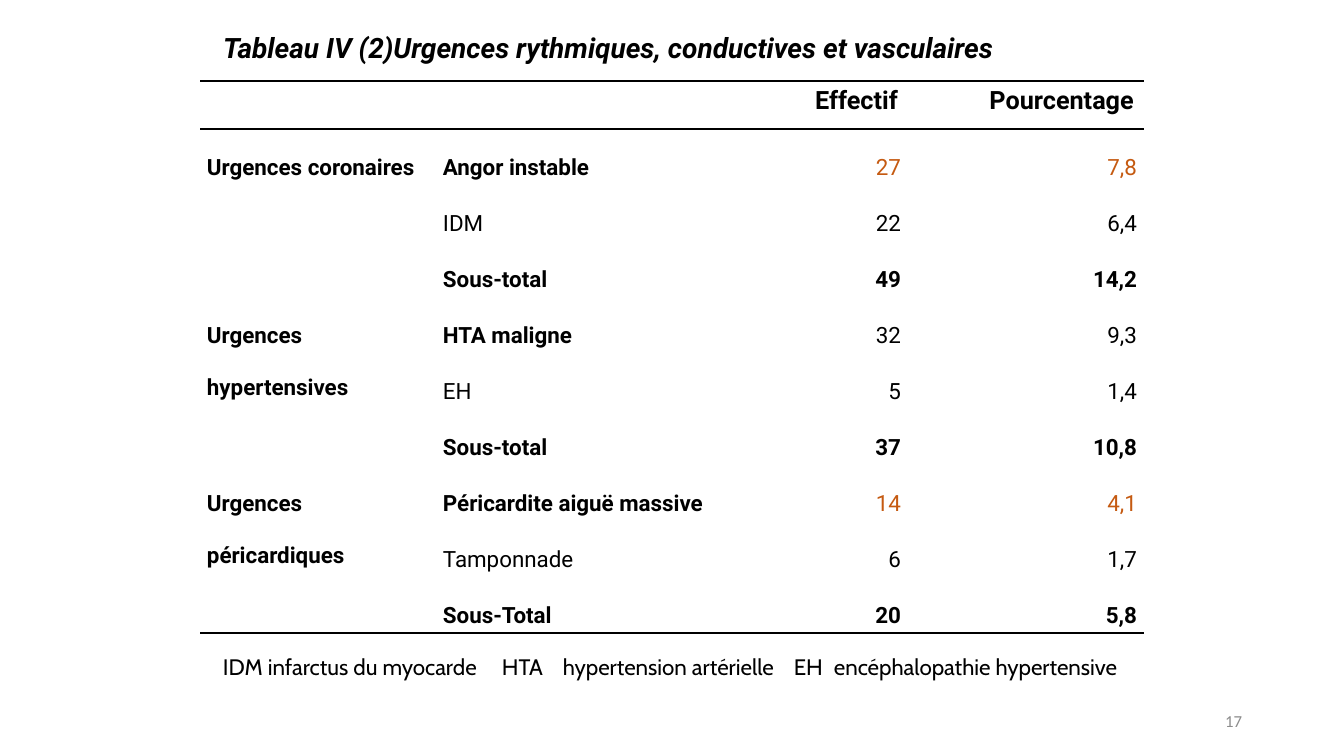
from dataclasses import dataclass
from lxml import etree
from pptx import Presentation, util as u
from pptx.dml.color import RGBColor
from pptx.enum import text
from pptx.oxml.ns import qn

TITLE = "Tableau IV (2)Urgences rythmiques, conductives et vasculaires"
HEADS = ["Effectif", "Pourcentage"]
GROUPS = [
    ("Urgences coronaires", [
        ("Angor instable", "27", "7,8"),
        ("IDM", "22", "6,4"),
        ("Sous-total", "49", "14,2")]),
    ("Urgences hypertensives", [
        ("HTA maligne", "32", "9,3"),
        ("EH", "5", "1,4"),
        ("Sous-total", "37", "10,8")]),
    ("Urgences péricardiques", [
        ("Péricardite aiguë massive", "14", "4,1"),
        ("Tamponnade", "6", "1,7"),
        ("Sous-Total", "20", "5,8")]),
]
MARKED = {"Angor instable", "Péricardite aiguë massive"}
NOTE = ["IDM infarctus du myocarde", "HTA", "hypertension artérielle",
        "EH", "encéphalopathie hypertensive"]
STOPS = [279, 340, 571, 611]
NUMBER = "17"

TITLE_BOX = (213, 25, 932, 44)
NOTE_BOX = (213, 648, 1026, 37)
NUMBER_BOX = (950, 701, 302, 40)
TABLE_AT = (200, 81)
COLS = [236, 351, 121, 236]
HEAD_H, ROW_H = 48, 56
PAD = 7
NO_GRID = "{2D5ABB26-0587-4C30-8999-92F81FD0307C}"
LEFT, RIGHT = text.PP_ALIGN.LEFT, text.PP_ALIGN.RIGHT


@dataclass(frozen=True)
class Theme:
    ink: str = "000000"
    mark: str = "C55A11"
    gray: str = "8C8C8C"
    main: str = "Roboto"
    note: str = "Cabin"
    foot: str = "Calibri"
    title: int = 20
    head: int = 18
    body: int = 16
    small: int = 12


T = Theme()


def px(n):
    return u.Emu(round(n * 914400 / 100.8))


def style(para, size, face=T.main, color=T.ink, bold=False, italic=False, align=LEFT):
    para.alignment = align
    font = para.font
    font.name, font.size = face, u.Pt(size)
    font.bold, font.italic = bold, italic
    font.color.rgb = RGBColor.from_string(color)


def rule(cell, *sides):
    props = cell._tc.get_or_add_tcPr()
    for side in sides:
        line = etree.SubElement(props, qn("a:ln" + side), w=str(u.Pt(1)))
        fill = etree.SubElement(line, qn("a:solidFill"))
        etree.SubElement(fill, qn("a:srgbClr"), val=T.ink)


def write(cell, words, **look):
    cell.text = words
    cell.margin_left = cell.margin_right = px(PAD)
    cell.margin_top = cell.margin_bottom = 0
    para = cell.text_frame.paragraphs[0]
    para.line_spacing = 2.0
    style(para, T.body, **look)


def label(slide, box, words):
    frame = slide.shapes.add_textbox(*map(px, box)).text_frame
    frame.word_wrap = True
    frame.text = words
    return frame


def add_title(slide):
    shape = slide.shapes.title
    shape.left, shape.top, shape.width, shape.height = map(px, TITLE_BOX)
    frame = shape.text_frame
    frame.text = TITLE
    frame.word_wrap = True
    frame.auto_size = text.MSO_AUTO_SIZE.NONE
    frame.vertical_anchor = text.MSO_ANCHOR.TOP
    style(frame.paragraphs[0], T.title, bold=True, italic=True)


def add_grid(slide):
    count = sum(len(items) for _, items in GROUPS)
    size = (sum(COLS), HEAD_H + count * ROW_H)
    frame = slide.shapes.add_table(count + 1, len(COLS), *map(px, TABLE_AT + size))
    grid = frame.table
    grid.first_row = grid.horz_banding = False
    grid._tbl.tblPr.find(qn("a:tableStyleId")).text = NO_GRID
    for col, wide in zip(grid.columns, COLS):
        col.width = px(wide)
    for i, row in enumerate(grid.rows):
        row.height = px(ROW_H if i else HEAD_H)

    for cell in grid.rows[0].cells:
        rule(cell, "T", "B")
    for cell in grid.rows[count].cells:
        rule(cell, "B")
    for col, words in enumerate(HEADS, 2):
        cell = grid.cell(0, col)
        cell.text = words
        style(cell.text_frame.paragraphs[0], T.head, bold=True, align=RIGHT)

    top = 1
    for name, items in GROUPS:
        last = top + len(items) - 1
        first = grid.cell(top, 0)
        first.merge(grid.cell(last, 0))
        write(first, name, bold=True)
        if last == count:
            rule(first, "B")
        for row, (item, *values) in enumerate(items, top):
            total = row == last
            write(grid.cell(row, 1), item, bold=total or row == top)
            color = T.mark if item in MARKED else T.ink
            for col, value in enumerate(values, 2):
                write(grid.cell(row, col), value, bold=total, color=color, align=RIGHT)
        top = last + 1
    for cell in grid.iter_cells():
        cell.fill.background()


def add_note(slide):
    para = label(slide, NOTE_BOX, "\t".join(NOTE)).paragraphs[0]
    tabs = etree.SubElement(para._p.get_or_add_pPr(), qn("a:tabLst"))
    for stop in STOPS:
        etree.SubElement(tabs, qn("a:tab"), pos=str(px(stop)), algn="l")
    style(para, T.body, face=T.note)


def add_number(slide):
    frame = label(slide, NUMBER_BOX, NUMBER)
    frame.vertical_anchor = text.MSO_ANCHOR.MIDDLE
    style(frame.paragraphs[0], T.small, face=T.foot, color=T.gray, align=RIGHT)


def main():
    deck = Presentation()
    deck.slide_width, deck.slide_height = px(1344), px(756)
    slide = deck.slides.add_slide(deck.slide_layouts[5])
    add_title(slide)
    add_grid(slide)
    add_note(slide)
    add_number(slide)
    deck.save("out.pptx")


if __name__ == "__main__":
    main()
